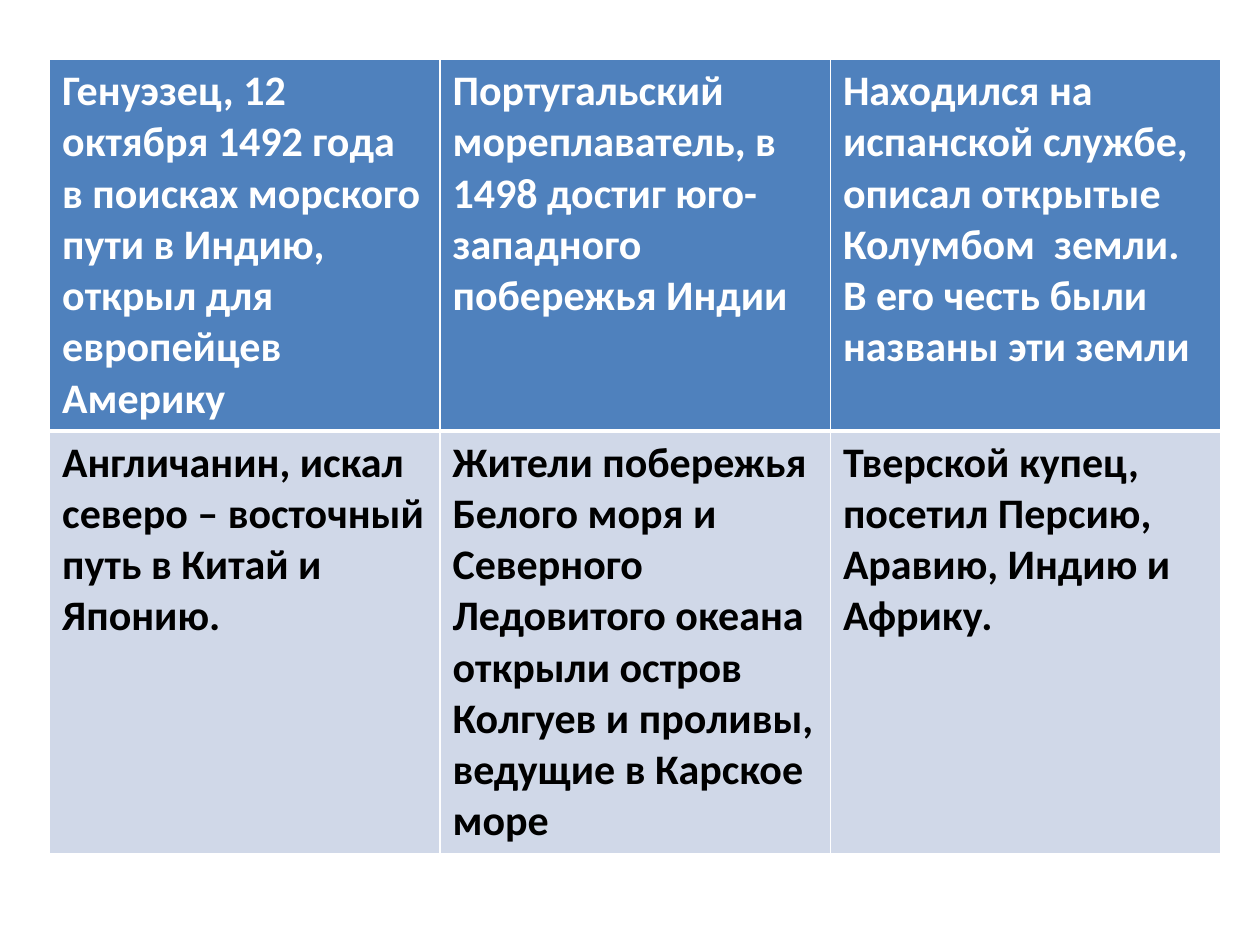
from dataclasses import dataclass

from lxml.etree import SubElement
from pptx import Presentation
from pptx.dml.color import RGBColor
from pptx.oxml.ns import qn
from pptx.table import Table, _Cell
from pptx.util import Cm, Pt

WHITE = "FFFFFF"
FONT_FORMAT = {"name": "Calibri", "size": Pt(24), "bold": True}
COLUMN_WIDTH = Cm(7.87)


@dataclass
class ExplorerRow:
    height: Cm
    fill: str
    text_color: str
    borders: dict[str, float]
    texts: list[str]


ROWS = [
    ExplorerRow(
        Cm(4.78), "4F81BD", WHITE,
        {"lnL": 1, "lnR": 1, "lnT": 1, "lnB": 3},
        [
            "Генуэзец, 12 октября 1492 года  в поисках морского пути в Индию, "
            "открыл для европейцев Америку",
            "Португальский мореплаватель, в 1498 достиг юго- западного побережья Индии",
            "Находился на испанской службе, описал открытые Колумбом  земли. "
            "В его честь были названы эти земли",
        ],
    ),
    ExplorerRow(
        Cm(8.28), "D0D8E8", "000000",
        {"lnL": 1, "lnR": 1, "lnT": 3, "lnB": 1},
        [
            "Англичанин, искал северо – восточный путь в Китай и Японию.",
            "Жители побережья Белого моря и Северного Ледовитого океана "
            "открыли остров Колгуев и проливы, ведущие в Карское море",
            "Тверской купец, посетил Персию, Аравию, Индию и Африку.",
        ],
    ),
]


def set_color(color_format, hex_color: str) -> None:
    color_format.rgb = RGBColor.from_string(hex_color)


def add_borders(cell: _Cell, borders: dict[str, float]) -> None:
    """Add white cell edges; must run before the fill to keep the XML order."""
    properties = cell._tc.get_or_add_tcPr()
    for edge, width in borders.items():
        line = SubElement(properties, qn(f"a:{edge}"), w=str(Pt(width)))
        solid_fill = SubElement(line, qn("a:solidFill"))
        SubElement(solid_fill, qn("a:srgbClr"), val=WHITE)


def write_cell(cell: _Cell, text: str, row: ExplorerRow) -> None:
    add_borders(cell, row.borders)
    cell.fill.solid()
    set_color(cell.fill.fore_color, row.fill)
    run = cell.text_frame.paragraphs[0].add_run()
    run.text = text
    for name, value in FONT_FORMAT.items():
        setattr(run.font, name, value)
    set_color(run.font.color, row.text_color)


def fill_table(table: Table, rows: list[ExplorerRow]) -> None:
    for column in table.columns:
        column.width = COLUMN_WIDTH
    for row_index, row in enumerate(rows):
        table.rows[row_index].height = row.height
        for column_index, text in enumerate(row.texts):
            write_cell(table.cell(row_index, column_index), text, row)


def main() -> None:
    presentation = Presentation()
    presentation.slide_width, presentation.slide_height = Cm(25.4), Cm(19.05)
    slide = presentation.slides.add_slide(presentation.slide_layouts[6])
    column_count = len(ROWS[0].texts)
    table_height = Cm(15.75)
    frame = slide.shapes.add_table(
        len(ROWS), column_count, Cm(1), Cm(1.2),
        COLUMN_WIDTH * column_count, table_height,
    )
    fill_table(frame.table, ROWS)
    frame.height = table_height
    presentation.save("out.pptx")


if __name__ == "__main__":
    main()
